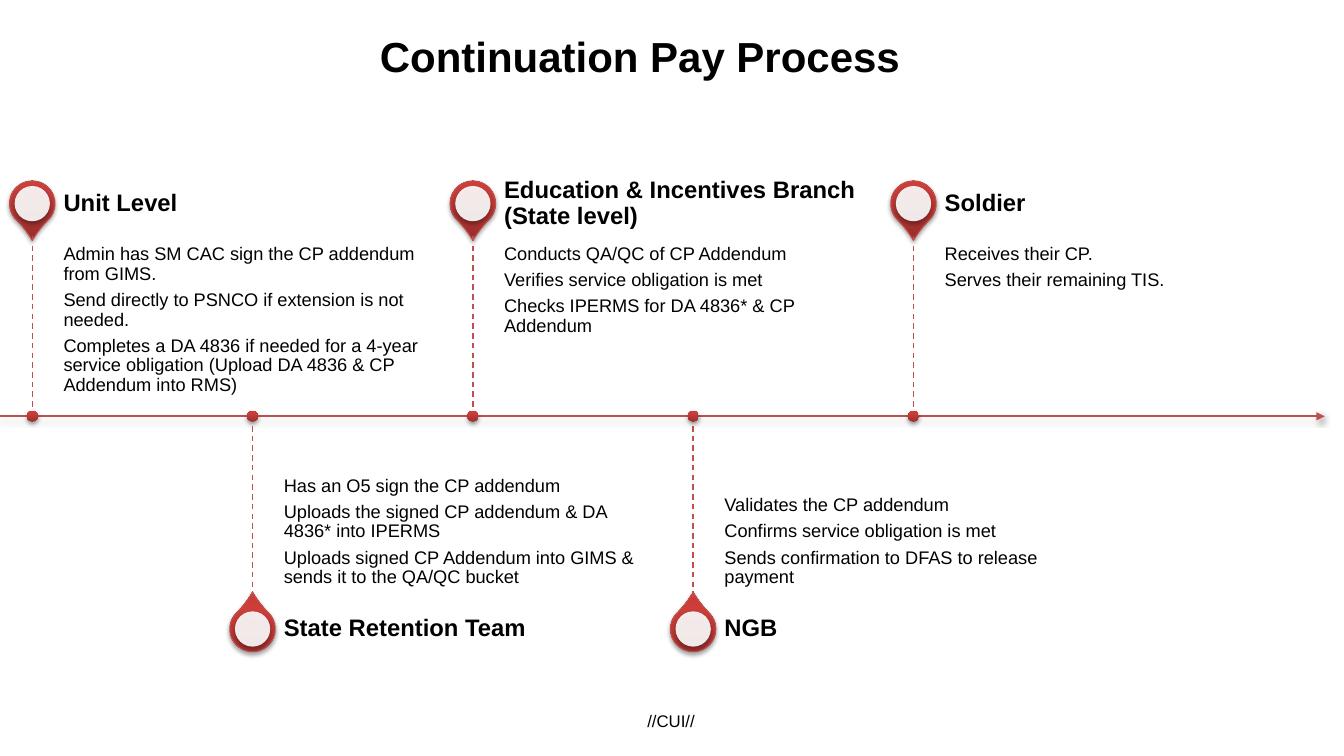
"""Build the Continuation Pay Process timeline slide."""
from typing import NamedTuple

from lxml import etree
from pptx import Presentation
from pptx.dml.color import RGBColor
from pptx.enum.dml import MSO_LINE
from pptx.enum.shapes import MSO_CONNECTOR, MSO_SHAPE
from pptx.enum.text import MSO_ANCHOR
from pptx.oxml.ns import qn
from pptx.util import Inches, Pt

STRAIGHT = MSO_CONNECTOR.STRAIGHT
DASH = MSO_LINE.DASH
OVAL = MSO_SHAPE.OVAL
TEAR = MSO_SHAPE.TEAR
TOP = MSO_ANCHOR.TOP
MIDDLE = MSO_ANCHOR.MIDDLE
BOTTOM = MSO_ANCHOR.BOTTOM

COLORS = {
    "text": "000000",
    "line": "C0504D",
    "dark": "9C2F2D",
    "mid": "CB3E3A",
    "light": "CE3B37",
    "white": "FFFFFF",
}
GRADIENT = ((0, "dark"), (80, "mid"), (100, "light"))
FONT = "Arial"

AXIS_Y = 4.13
AXIS_END = 13.14
FIRST_X = 0.32
PITCH = 8.74 / 4
STEM = 1.79
PIN_OFFSET = 2.11
TEXT_OFFSET = 0.31
TEXT_WIDTH = 3.65
HEADING_HEIGHT = 0.63


class Stage(NamedTuple):
    heading: str
    steps: tuple[str, ...]


class Box(NamedTuple):
    left: float
    top: float
    width: float
    height: float


class TextStyle(NamedTuple):
    size: float
    bold: bool = False
    anchor: object = TOP
    margins: tuple[float, float, float, float] = (0, 0, 0, 0)
    line_spacing: object = 0.9
    space_after: float = 0


HEADING = TextStyle(17, True, MIDDLE, (0, 0, 0.12, 0))
BODY_ABOVE = TextStyle(13, False, TOP, (0, 0.09, 0.09, 0.14), 0.9, 4.55)
BODY_BELOW = TextStyle(13, False, BOTTOM, (0, 0.14, 0, 0.09), 0.9, 4.55)
TITLE = TextStyle(30, True, TOP, (0.1, 0.05, 0.1, 0.05), 1.0)
MARKING = TextStyle(12, line_spacing=Pt(14.2))

STAGES = (
    Stage("Unit Level", (
        "Admin has SM CAC sign the CP addendum from GIMS.",
        "Send directly to PSNCO if extension is not needed.",
        "Completes a DA 4836 if needed for a 4-year service obligation "
        "(Upload DA 4836 & CP Addendum into RMS)",
    )),
    Stage("State Retention Team", (
        "Has an O5 sign the CP addendum",
        "Uploads the signed CP addendum & DA 4836* into IPERMS",
        "Uploads signed CP Addendum into GIMS & sends it to the QA/QC bucket",
    )),
    Stage("Education & Incentives Branch (State level)", (
        "Conducts QA/QC of CP Addendum",
        "Verifies service obligation is met",
        "Checks IPERMS for DA 4836* & CP Addendum",
    )),
    Stage("NGB", (
        "Validates the CP addendum",
        "Confirms service obligation is met",
        "Sends confirmation to DFAS to release payment",
    )),
    Stage("Soldier", (
        "Receives their CP.",
        "Serves their remaining TIS.",
    )),
)


def color(name: str) -> RGBColor:
    return RGBColor.from_string(COLORS[name])


def add_effects(shape, opacity: int = 0) -> None:
    properties = shape.element.spPr
    effects = etree.SubElement(properties, qn("a:effectLst"))
    if opacity:
        shadow = etree.SubElement(
            effects, qn("a:outerShdw"), blurRad=str(Pt(3.1)),
            dist=str(Pt(1.8)), dir="5400000", rotWithShape="0")
        black = etree.SubElement(shadow, qn("a:srgbClr"), val=COLORS["text"])
        etree.SubElement(black, qn("a:alpha"), val=str(opacity * 1000))


def fill_gradient(shape) -> None:
    gradient = etree.SubElement(
        shape.element.spPr, qn("a:gradFill"), rotWithShape="0")
    stops = etree.SubElement(gradient, qn("a:gsLst"))
    for position, name in GRADIENT:
        stop = etree.SubElement(stops, qn("a:gs"), pos=str(position * 1000))
        etree.SubElement(stop, qn("a:srgbClr"), val=COLORS[name])
    etree.SubElement(gradient, qn("a:lin"), ang="16200000", scaled="0")


def add_centered(slide, kind, x: float, y: float, size: float):
    return slide.shapes.add_shape(
        kind, Inches(x - size / 2), Inches(y - size / 2),
        Inches(size), Inches(size))


def add_line(slide, start: tuple[float, float], end: tuple[float, float],
             width: float):
    line = slide.shapes.add_connector(
        STRAIGHT, *(Inches(value) for value in start + end))
    line.line.color.rgb = color("line")
    line.line.width = Pt(width)
    return line


def add_text(slide, box: Box, paragraphs: tuple[str, ...],
             style: TextStyle, wrap: bool = True) -> None:
    shape = slide.shapes.add_textbox(*(Inches(value) for value in box))
    frame = shape.text_frame
    frame.word_wrap = wrap
    frame.vertical_anchor = style.anchor
    (frame.margin_left, frame.margin_top, frame.margin_right,
     frame.margin_bottom) = (Inches(value) for value in style.margins)
    for index, text in enumerate(paragraphs):
        paragraph = frame.add_paragraph() if index else frame.paragraphs[0]
        paragraph.line_spacing = style.line_spacing
        paragraph.space_after = Pt(style.space_after)
        run = paragraph.add_run()
        run.text = text
        run.font.name = FONT
        run.font.size = Pt(style.size)
        run.font.bold = style.bold
        run.font.color.rgb = color("text")


def add_pin(slide, x: float, y: float, rotation: int) -> None:
    pin = add_centered(slide, TEAR, x, y, 0.45)
    pin.adjustments[0] = 1.15
    pin.rotation = rotation
    fill_gradient(pin)
    pin.line.color.rgb = color("line")
    pin.line.width = Pt(0.75)
    add_effects(pin, 35)

    center = add_centered(slide, OVAL, x, y, 0.35)
    center.fill.solid()
    center.fill.fore_color.rgb = color("white")
    white = center.element.spPr.find(f"{qn('a:solidFill')}/{qn('a:srgbClr')}")
    etree.SubElement(white, qn("a:alpha"), val="90000")
    center.line.fill.background()
    add_effects(center, 35)


def add_stage(slide, stage: Stage, x: float, above: bool) -> None:
    side = -1 if above else 1
    stem_end = AXIS_Y + side * STEM
    left = x + TEXT_OFFSET
    add_pin(slide, x, AXIS_Y + side * PIN_OFFSET, 135 if above else 315)
    add_text(slide, Box(left, min(AXIS_Y, stem_end), TEXT_WIDTH, STEM),
             stage.steps, BODY_ABOVE if above else BODY_BELOW)
    heading_top = stem_end - HEADING_HEIGHT if above else stem_end
    add_text(slide, Box(left, heading_top, TEXT_WIDTH, HEADING_HEIGHT),
             (stage.heading,), HEADING)
    stem = add_line(slide, (x, min(AXIS_Y, stem_end)),
                    (x, max(AXIS_Y, stem_end)), 1)
    stem.line.dash_style = DASH
    add_effects(stem)

    dot = add_centered(slide, OVAL, x, AXIS_Y, 0.11)
    fill_gradient(dot)
    dot.line.fill.background()
    add_effects(dot, 38)


def main() -> None:
    presentation = Presentation()
    presentation.slide_width = Inches(13.33)
    presentation.slide_height = Inches(7.5)
    slide = presentation.slides.add_slide(presentation.slide_layouts[6])
    add_text(slide, Box(6.42, 7.05, 0.5, 0.21), ("//CUI//",), MARKING, False)
    axis = add_line(slide, (0, AXIS_Y), (AXIS_END, AXIS_Y), 1.5)
    etree.SubElement(axis.line._get_or_add_ln(), qn("a:tailEnd"),
                     type="triangle")
    add_effects(axis, 35)
    for index, stage in enumerate(STAGES):
        add_stage(slide, stage, FIRST_X + index * PITCH, index % 2 == 0)
    add_text(slide, Box(3.67, 0.25, 6, 0.61),
             ("Continuation Pay Process",), TITLE)
    presentation.save("out.pptx")


if __name__ == "__main__":
    main()
